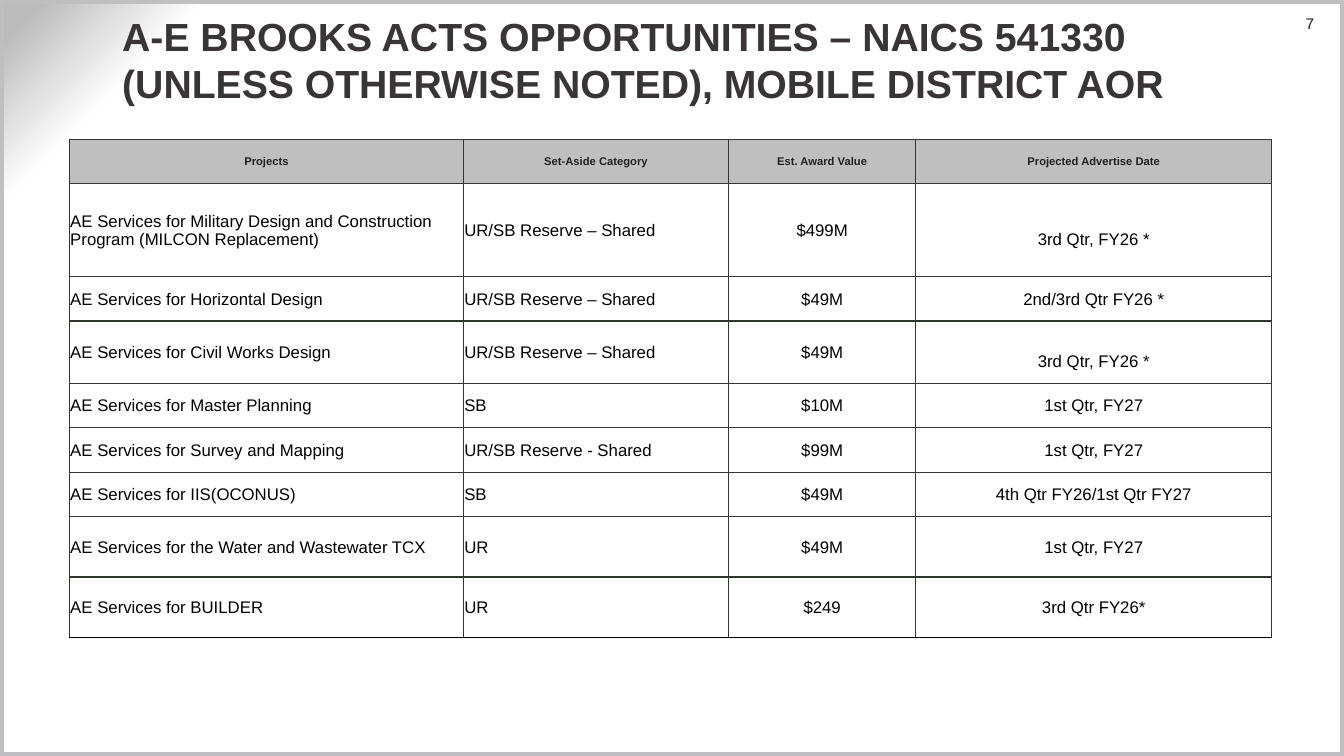
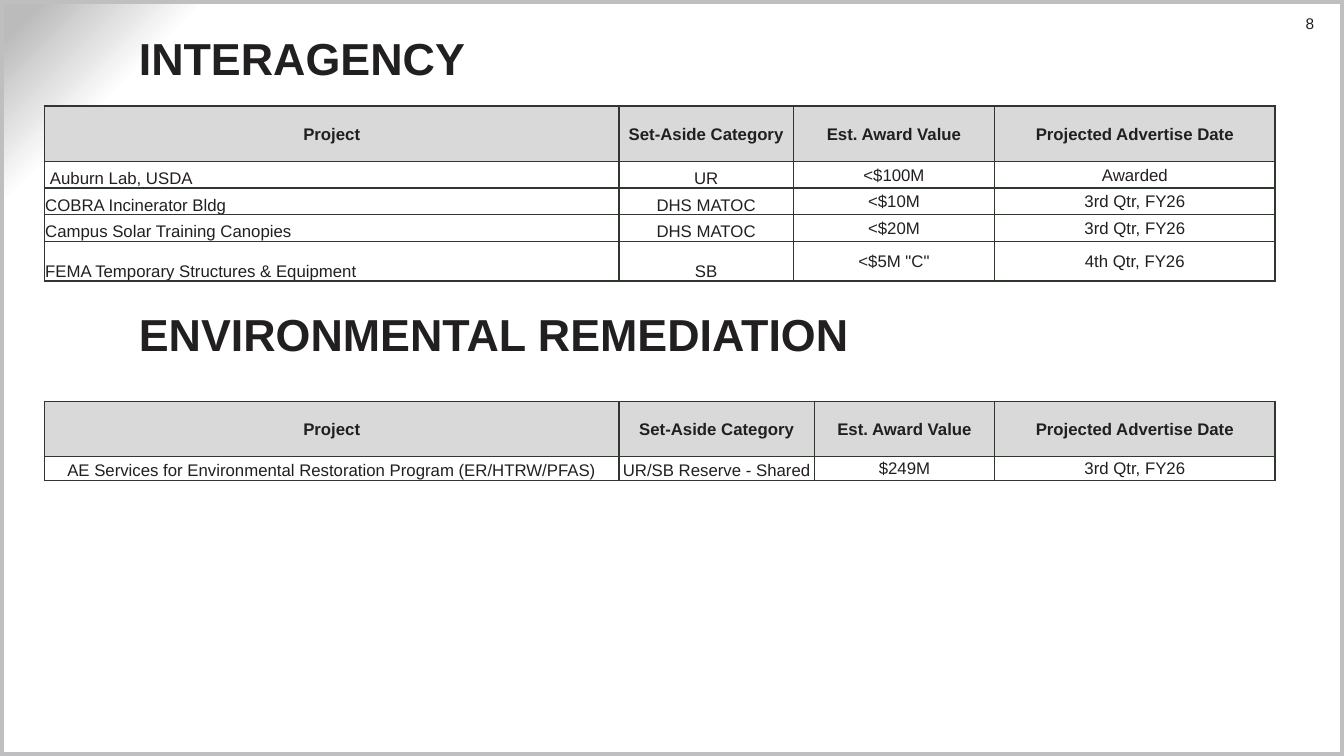
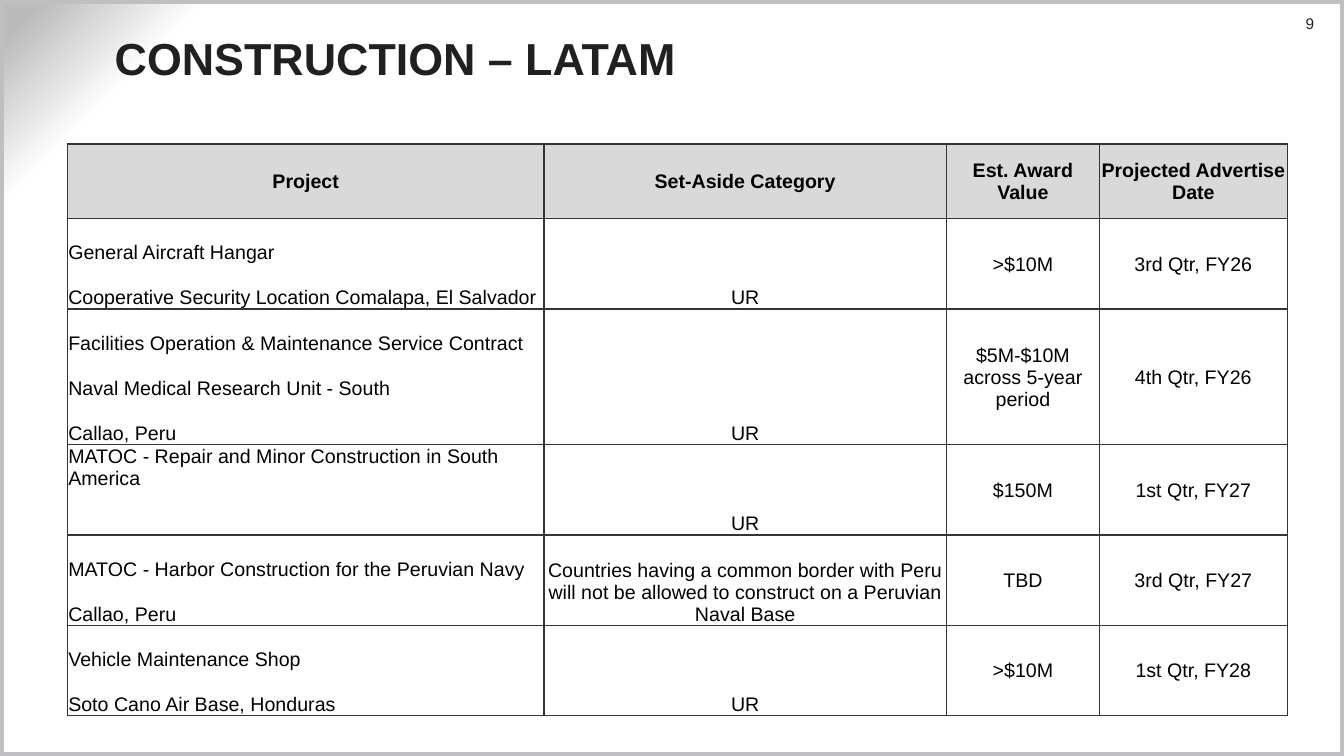
"""Build three slides of contract opportunity tables."""
from pptx import Presentation
from pptx.dml.color import RGBColor
from pptx.enum.shapes import MSO_SHAPE
from pptx.enum.text import MSO_ANCHOR, MSO_AUTO_SIZE, PP_ALIGN
from pptx.oxml import parse_xml
from pptx.oxml.ns import nsdecls, qn
from pptx.util import Cm, Pt

COLORS = {
    "ink": "221F20", "title": "393436", "black": "000000", "grid": "2F372F",
    "frame": "BFBFC2", "header": "BFBFBF", "pale": "D9D9D9",
    "white": "FFFFFF", "corner": "BBBBBC",
}
FONT = "Arial"
ALIGNMENTS = {"l": PP_ALIGN.LEFT, "c": PP_ALIGN.CENTER, "r": PP_ALIGN.RIGHT}
ANCHORS = {"m": MSO_ANCHOR.MIDDLE, "b": MSO_ANCHOR.BOTTOM, "t": MSO_ANCHOR.TOP}
HEADINGS = ["Project", "Set-Aside Category", "Est. Award Value", "Projected Advertise Date"]


def rgb(name):
    return RGBColor.from_string(COLORS[name])


class Deck:
    """Hold the shared style and the current slide."""

    def __init__(self):
        self.presentation = Presentation()
        self.presentation.slide_width = Cm(33.87)
        self.presentation.slide_height = Cm(19.05)
        self.slide = None
        self.set_background()

    def set_background(self):
        master = self.presentation.slide_master
        master.background.fill.solid()
        properties = master.element.find(".//" + qn("p:bgPr"))
        stops = "".join(
            f'<a:gs pos="{position * 1000}"><a:srgbClr val="{COLORS[color]}"/></a:gs>'
            for position, color in ((87, "white"), (90, "white"), (98, "corner")))
        gradient = parse_xml(
            f'<a:gradFill {nsdecls("a")} rotWithShape="1"><a:gsLst>{stops}</a:gsLst>'
            '<a:path path="circle"><a:fillToRect l="100000" t="100000"/></a:path></a:gradFill>')
        properties.replace(properties[0], gradient)

    def new_slide(self, number):
        self.slide = self.presentation.slides.add_slide(self.presentation.slide_layouts[5])
        frame = self.slide.shapes.add_shape(
            MSO_SHAPE.RECTANGLE, 0, 0,
            self.presentation.slide_width, self.presentation.slide_height)
        frame.shadow.inherit = False
        frame.fill.background()
        frame.line.color.rgb = rgb("frame")
        frame.line.width = Pt(6)
        shape = self.slide.shapes.add_textbox(Cm(31.6), Cm(0.36), Cm(1.52), Cm(0.48))
        self.format_frame(shape.text_frame, (0.25, 0, 0, 0))
        self.add_text(shape.text_frame, str(number), 11, "ink", align="r")

    def format_frame(self, text_frame, margins, anchor="t"):
        text_frame.word_wrap = True
        text_frame.auto_size = MSO_AUTO_SIZE.NONE
        text_frame.vertical_anchor = ANCHORS[anchor]
        (text_frame.margin_left, text_frame.margin_top,
         text_frame.margin_right, text_frame.margin_bottom) = map(Cm, margins)

    def add_text(self, text_frame, text, size, color, bold=False, align="l"):
        paragraph = text_frame.paragraphs[0]
        paragraph.alignment = ALIGNMENTS[align]
        for index, line in enumerate(text.split("\n")):
            if index:
                paragraph.add_line_break()
            run = paragraph.add_run()
            run.text = line
            run.font.name = FONT
            run.font.size = Pt(size)
            run.font.bold = bold
            run.font.color.rgb = rgb(color)

    def title(self, text, left, top, width, height=3, size=32, color="ink",
              margins=(0.25, 0.13, 0.25, 0.13), anchor="t"):
        shape = self.slide.shapes.title
        shape.left, shape.top, shape.width, shape.height = map(Cm, (left, top, width, height))
        self.format_frame(shape.text_frame, margins, anchor)
        self.add_text(shape.text_frame, text, size, color, bold=True)

    def heading(self, text, left, top, width, height=3):
        shape = self.slide.shapes.add_textbox(*map(Cm, (left, top, width, height)))
        self.format_frame(shape.text_frame, (0.25, 0.13, 0.25, 0.13))
        self.add_text(shape.text_frame, text, 32, "ink", bold=True)

    def format_cell(self, cell, anchor, fill=None, open_sides="", bottom=("grid", 1)):
        cell.margin_left = cell.margin_right = cell.margin_top = Cm(0.02)
        cell.margin_bottom = 0
        cell.vertical_anchor = ANCHORS[anchor]
        properties = cell._tc.get_or_add_tcPr()
        for side in "LRTB":
            color, width = bottom if side == "B" else ("grid", 1)
            paint = ("<a:noFill/>" if side in open_sides else
                     f'<a:solidFill><a:srgbClr val="{COLORS[color]}"/></a:solidFill>')
            properties.append(parse_xml(
                f'<a:ln{side} {nsdecls("a")} w="{Pt(width)}">{paint}</a:ln{side}>'))
        if fill:
            cell.fill.solid()
            cell.fill.fore_color.rgb = rgb(fill)
        else:
            cell.fill.background()

    def table(self, left, top, widths, heights, records, headings=HEADINGS, fill="pale",
              size=12, header_size=None, color="ink", header_color=None,
              aligns="lccc", anchors="bbmm", last_edge=("grid", 1)):
        shape = self.slide.shapes.add_table(
            len(heights), len(widths), Cm(left), Cm(top), Cm(sum(widths)), Cm(sum(heights)))
        table = shape.table
        table.first_row = table.horz_banding = False
        for column, width in zip(table.columns, widths):
            column.width = Cm(width)
        for row, height in zip(table.rows, heights):
            row.height = Cm(height)
        for column, text in enumerate(headings):
            cell = table.cell(0, column)
            self.format_cell(cell, "m", fill)
            self.add_text(cell.text_frame, text, header_size or size,
                          header_color or color, True, "c")
        first = 1
        for first_cell, *others in records:
            lines = first_cell if isinstance(first_cell, tuple) else (first_cell,)
            last = first + len(lines) - 1
            for row in range(first, last + 1):
                open_sides = ("T" if row > first else "") + ("B" if row < last else "")
                bottom = last_edge if row == len(heights) - 1 else ("grid", 1)
                for column, anchor in enumerate(anchors):
                    self.format_cell(table.cell(row, column), anchor,
                                     open_sides="" if column else open_sides, bottom=bottom)
                if lines[row - first]:
                    self.add_text(table.cell(row, 0).text_frame, lines[row - first],
                                  size, color, align=aligns[0])
            for column, text in enumerate(others, 1):
                cell = table.cell(first, column)
                if last > first:
                    cell.merge(table.cell(last, column))
                self.add_text(cell.text_frame, text, size, color, align=aligns[column])
            first = last + 1
        return table


def brooks_act_slide(deck):
    deck.new_slide(7)
    deck.title("A-E BROOKS ACTS OPPORTUNITIES – NAICS 541330\n"
               "(UNLESS OTHERWISE NOTED), MOBILE DISTRICT AOR",
               2.95, 0.33, 28.85, 2.31, 28, "title", (0.13, 0, 0.13, 0), "m")
    table = deck.table(
        1.75, 3.51, [9.93, 6.68, 4.72, 8.97],
        [1.12, 2.34, 1.12, 1.57, 1.12, 1.12, 1.12, 1.52, 1.52],
        [
            ["AE Services for Military Design and Construction Program (MILCON Replacement)",
             "UR/SB Reserve – Shared", "$499M", "3rd Qtr, FY26 *"],
            ["AE Services for Horizontal Design", "UR/SB Reserve – Shared", "$49M",
             "2nd/3rd Qtr FY26 *"],
            ["AE Services for Civil Works Design", "UR/SB Reserve – Shared", "$49M",
             "3rd Qtr, FY26 *"],
            ["AE Services for Master Planning", "SB", "$10M", "1st Qtr, FY27"],
            ["AE Services for Survey and Mapping", "UR/SB Reserve - Shared", "$99M",
             "1st Qtr, FY27"],
            ["AE Services for IIS(OCONUS)", "SB", "$49M", "4th Qtr FY26/1st Qtr FY27"],
            ["AE Services for the Water and Wastewater TCX", "UR", "$49M", "1st Qtr, FY27"],
            ["AE Services for BUILDER", "UR", "$249", "3rd Qtr FY26*"],
        ],
        headings=["Projects"] + HEADINGS[1:], fill="header", header_size=8, color="black",
        header_color="ink", aligns="llcc", anchors="mmmm", last_edge=("black", 0.5))
    for row in (1, 3):
        table.cell(row, 3).margin_top = Cm(0.5)


def interagency_slide(deck):
    deck.new_slide(8)
    deck.title("INTERAGENCY", 3.25, 0.64, 27.99)
    table = deck.table(
        1.12, 2.67, [14.48, 4.39, 5.08, 7.06], [1.4, 0.67, 0.67, 0.67, 1],
        [
            ["Auburn Lab, USDA", "UR", "<$100M", "Awarded"],
            ["COBRA Incinerator Bldg", "DHS MATOC", "<$10M", "3rd Qtr, FY26"],
            ["Campus Solar Training Canopies", "DHS MATOC", "<$20M", "3rd Qtr, FY26"],
            ["FEMA Temporary Structures & Equipment", "SB", '<$5M "C"', "4th Qtr, FY26"],
        ])
    table.cell(1, 0).margin_left = Cm(0.14)
    deck.heading("ENVIRONMENTAL REMEDIATION", 3.25, 7.59, 28.24)
    deck.table(
        1.12, 10.11, [14.48, 4.92, 4.55, 7.06], [1.4, 0.59],
        [["AE Services for Environmental Restoration Program (ER/HTRW/PFAS)",
          "UR/SB Reserve - Shared", "$249M", "3rd Qtr, FY26"]],
        aligns="cccc")


def construction_slide(deck):
    deck.new_slide(9)
    deck.title("CONSTRUCTION – LATAM", 2.64, 0.64, 28.6)
    deck.table(
        1.7, 3.63, [12.01, 10.14, 3.86, 4.73], [1.88] + [1.14] * 11,
        [
            [("General Aircraft Hangar", "Cooperative Security Location Comalapa, El Salvador"),
             "UR", ">$10M", "3rd Qtr, FY26"],
            [("Facilities Operation & Maintenance Service Contract",
              "Naval Medical Research Unit - South", "Callao, Peru"),
             "UR", "$5M-$10M across 5-year period", "4th Qtr, FY26"],
            [("MATOC - Repair and Minor Construction in South America", ""),
             "UR", "$150M", "1st Qtr, FY27"],
            [("MATOC - Harbor Construction for the Peruvian Navy", "Callao, Peru"),
             "Countries having a common border with Peru will not be allowed to construct "
             "on a Peruvian Naval Base", "TBD", "3rd Qtr, FY27"],
            [("Vehicle Maintenance Shop", "Soto Cano Air Base, Honduras"),
             "UR", ">$10M", "1st Qtr, FY28"],
        ],
        size=14, color="black")


def main():
    deck = Deck()
    brooks_act_slide(deck)
    interagency_slide(deck)
    construction_slide(deck)
    deck.presentation.save("out.pptx")


if __name__ == "__main__":
    main()
